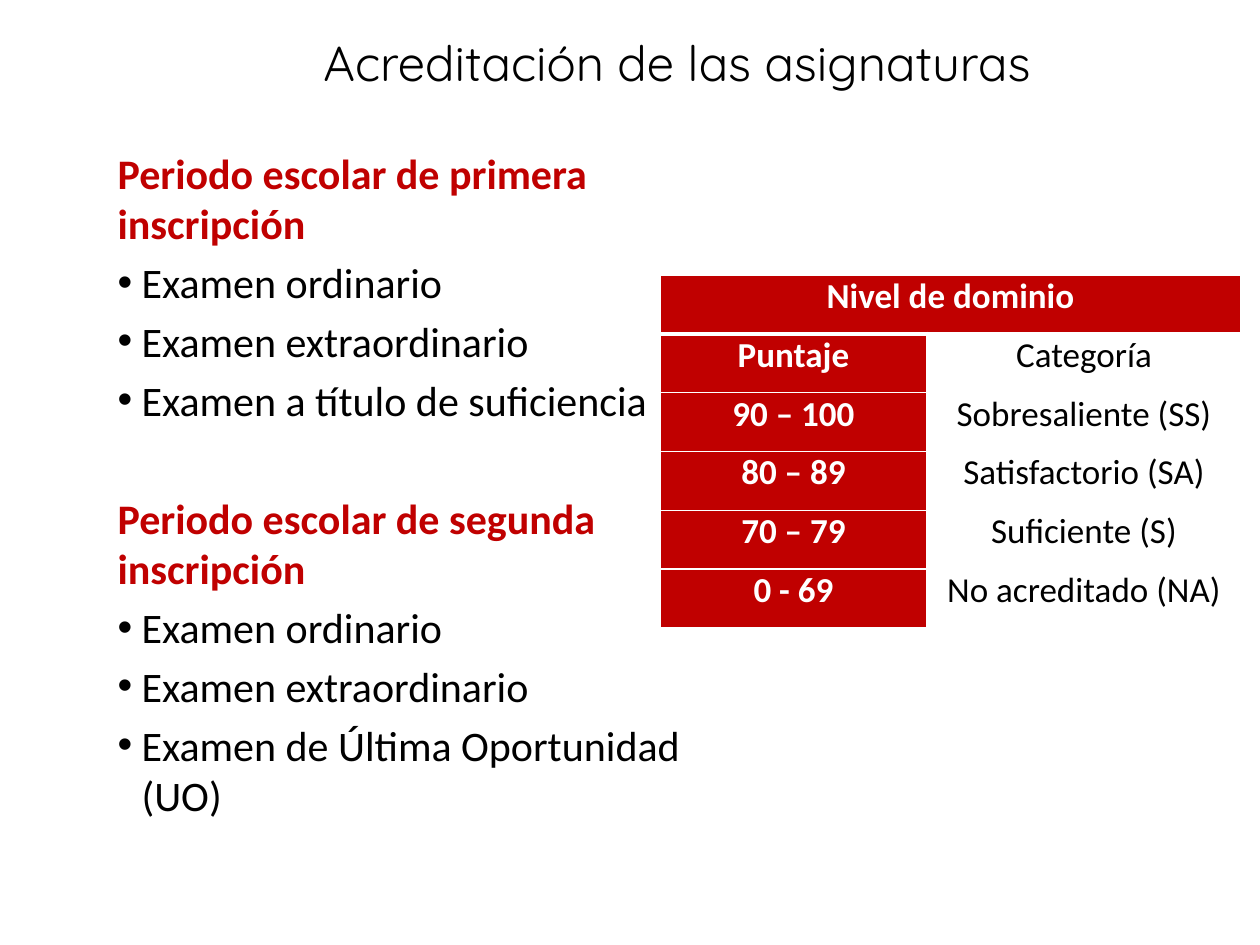
from lxml import etree
from pptx import Presentation
from pptx.dml.color import RGBColor
from pptx.enum.text import MSO_ANCHOR, MSO_AUTO_SIZE, PP_ALIGN
from pptx.oxml.ns import qn
from pptx.util import Emu, Pt

CENTER = PP_ALIGN.CENTER
MIDDLE, TOP = MSO_ANCHOR.MIDDLE, MSO_ANCHOR.TOP
NO_AUTOFIT = MSO_AUTO_SIZE.NONE
EMU_PER_PX = 914400 / 126
RED, WHITE, BLACK = "C00000", "FFFFFF", "000000"

PERIODS = [
    ("Periodo escolar de primera inscripción",
     ["Examen ordinario", "Examen extraordinario", "Examen a título de suficiencia"]),
    ("Periodo escolar de segunda inscripción",
     ["Examen ordinario", "Examen extraordinario", "Examen de Última Oportunidad (UO)"]),
]
LEVELS = [
    ("Puntaje", "Categoría"),
    ("90 – 100", "Sobresaliente (SS)"),
    ("80 – 89", "Satisfactorio (SA)"),
    ("70 – 79", "Suficiente (S)"),
    ("0 - 69", "No acreditado (NA)"),
]


def px(length):
    return Emu(round(length * EMU_PER_PX))


def color(value):
    return RGBColor.from_string(value)


def apply(target, values):
    for name, value in values.items():
        setattr(target, name, value)


def place(shape, left, top, width, height):
    apply(shape, {"left": px(left), "top": px(top),
                  "width": px(width), "height": px(height)})


def write(paragraph, text, font_color, **font):
    paragraph.text = text
    apply(paragraph.font, font)
    paragraph.font.color.rgb = color(font_color)


def set_bullet(paragraph, indent):
    properties = paragraph._p.get_or_add_pPr()
    properties.set("marL", str(px(indent)))
    properties.set("indent", str(-px(indent)))
    if indent:
        etree.SubElement(properties, qn("a:buFont")).set("typeface", "Arial")
        etree.SubElement(properties, qn("a:buChar")).set("char", "•")
    else:
        etree.SubElement(properties, qn("a:buNone"))


def add_title(slide):
    title = slide.shapes.title
    place(title, 134, 0, 1086, 183)
    apply(title.text_frame, {"word_wrap": True, "auto_size": NO_AUTOFIT,
                             "vertical_anchor": MIDDLE, "margin_bottom": px(66)})
    heading = title.text_frame.paragraphs[0]
    write(heading, "Acreditación de las asignaturas", BLACK,
          name="Quicksand", size=Pt(28), bold=False)
    heading.alignment = CENTER


def add_periods(slide):
    body = slide.placeholders[1]
    place(body, 105, 141, 659, 559)
    frame = body.text_frame
    apply(frame, {"word_wrap": True, "auto_size": NO_AUTOFIT, "vertical_anchor": TOP})
    for number, (period, exams) in enumerate(PERIODS):
        for position, text in enumerate([period, *exams]):
            is_heading = position == 0
            is_first = is_heading and number == 0
            line = frame.paragraphs[0] if is_first else frame.add_paragraph()
            set_bullet(line, 0 if is_heading else 24)
            write(line, text, RED if is_heading else BLACK,
                  name="Calibri", size=Pt(24), bold=is_heading)
            line.space_before = Pt(0 if is_first else 38.8 if is_heading else 4.8)


def set_border(cell, side, points):
    border = etree.SubElement(cell._tc.get_or_add_tcPr(), qn(f"a:{side}"), w=str(Pt(points)))
    fill = etree.SubElement(border, qn("a:solidFill"))
    etree.SubElement(fill, qn("a:srgbClr"), val=WHITE)


def format_cell(cell, text, is_red, top_border, bottom_border):
    for side, points in (("lnL", 1), ("lnR", 1), ("lnT", top_border), ("lnB", bottom_border)):
        set_border(cell, side, points)
    cell.fill.solid()
    cell.fill.fore_color.rgb = color(RED if is_red else WHITE)
    apply(cell, {"margin_left": px(9), "margin_right": px(9), "margin_top": 0,
                 "margin_bottom": 0, "vertical_anchor": TOP})
    label = cell.text_frame.paragraphs[0]
    write(label, text, WHITE if is_red else BLACK,
          name="Calibri", size=Pt(20), bold=is_red)
    label.alignment = CENTER


def add_levels(slide):
    rows = [("Nivel de dominio", ""), *LEVELS]
    table = slide.shapes.add_table(len(rows), 2, px(660), px(275), px(581), px(353)).table
    apply(table, {"first_row": False, "horz_banding": False})
    for column, width in zip(table.columns, (267, 314)):
        column.width = px(width)
    for r, texts in enumerate(rows):
        for c, text in enumerate(texts):
            format_cell(table.cell(r, c), text, r == 0 or c == 0,
                        3 if r == 1 else 1, 3 if r == 0 else 1)
    table.cell(0, 0).merge(table.cell(0, 1))


def main():
    presentation = Presentation()
    apply(presentation, {"slide_width": px(1260), "slide_height": px(945)})
    slide = presentation.slides.add_slide(presentation.slide_layouts[1])
    add_title(slide)
    add_periods(slide)
    add_levels(slide)
    presentation.save("out.pptx")


if __name__ == "__main__":
    main()
